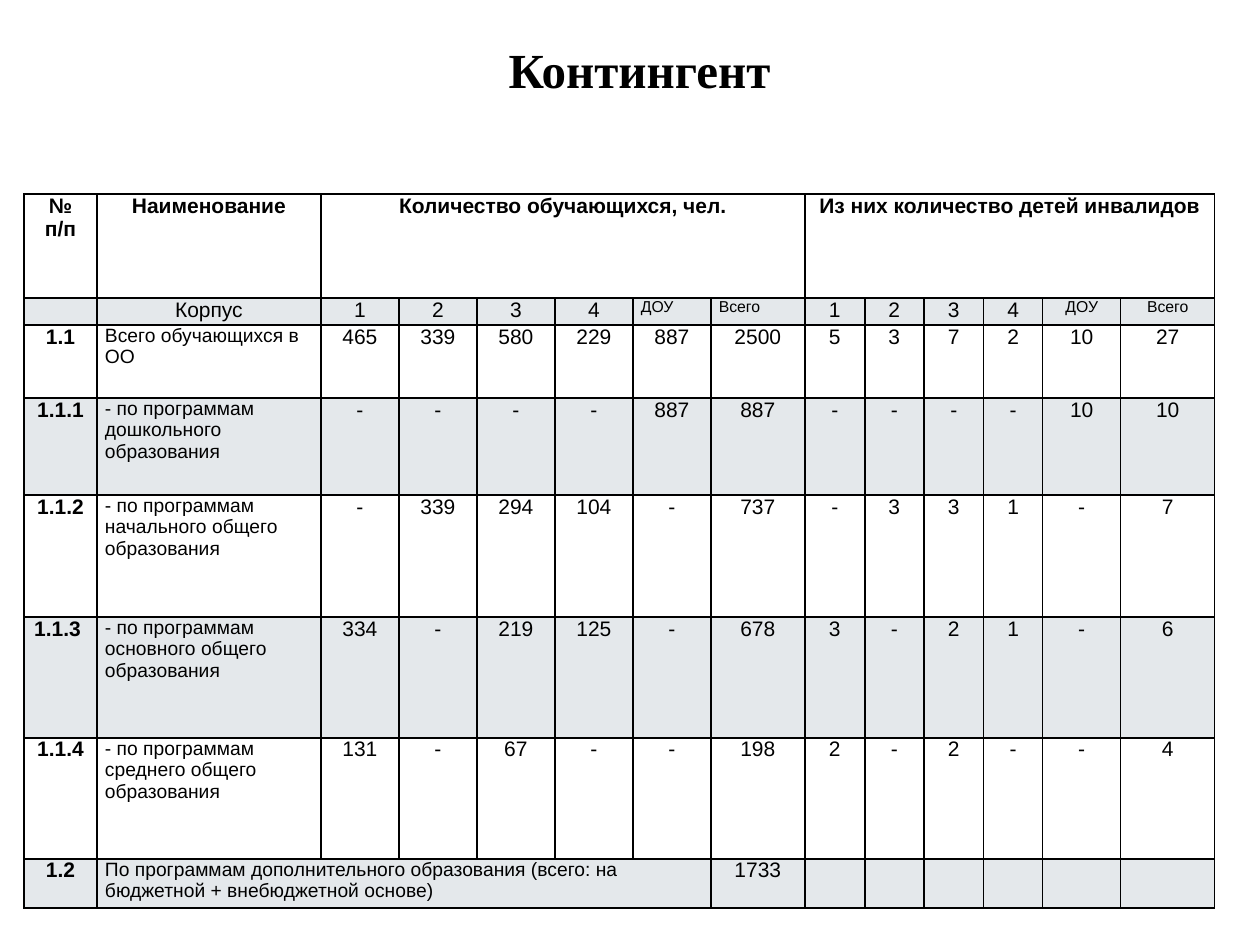
from lxml import etree
from pptx import Presentation
from pptx.dml.color import RGBColor
from pptx.enum.text import MSO_ANCHOR, PP_ALIGN
from pptx.oxml.ns import qn
from pptx.util import Emu, Pt

LEFT, CENTER = PP_ALIGN.LEFT, PP_ALIGN.CENTER
PX = 914400 // 126
BLACK, BAND = "000000", "78909C"
BAND_ALPHA = 20

TITLE = "Контингент"
BUILDINGS = ["1", "2", "3", "4", "ДОУ", "Всего"]
# None continues the merged cell to its left
ROWS = [
    ["№ п/п", "Наименование", "Количество обучающихся, чел."] + [None] * 5
    + ["Из них количество детей инвалидов"] + [None] * 5,
    ["", "Корпус"] + BUILDINGS * 2,
    ["1.1", "Всего обучающихся в ОО", "465", "339", "580", "229", "887", "2500",
     "5", "3", "7", "2", "10", "27"],
    ["1.1.1", "- по программам дошкольного образования",
     "-", "-", "-", "-", "887", "887", "-", "-", "-", "-", "10", "10"],
    ["1.1.2", "- по программам начального общего образования",
     "-", "339", "294", "104", "-", "737", "-", "3", "3", "1", "-", "7"],
    ["1.1.3 ", "- по программам основного общего образования",
     "334", "-", "219", "125", "-", "678", "3", "-", "2", "1", "-", "6"],
    ["1.1.4", "- по программам среднего общего образования",
     "131", "-", "67", "-", "-", "198", "2", "-", "2", "-", "-", "4"],
    ["1.2", "По программам дополнительного образования (всего: на бюджетной"
     " + внебюджетной основе)"] + [None] * 5 + ["1733"] + [""] * 6,
]
COL_WIDTHS = [73, 224] + [78] * 5 + [94] + [60, 59] * 2 + [78, 94]
ROW_HEIGHTS = [104, 27, 73, 97, 122, 121, 121, 49]
TABLE_LEFT, TABLE_TOP = 24, 194


def px(n):
    return Emu(n * PX)


def rgb(color):
    return RGBColor.from_string(color)


def write(tf, text, size=12, bold=False, align=CENTER, font="Arial"):
    p = tf.paragraphs[0]
    p.alignment = align
    if not text:
        # the end mark keeps an empty cell from growing its row
        etree.SubElement(p._p, qn("a:endParaRPr"), sz=str(size * 100))
        return
    r = p.add_run()
    r.text = text
    r.font.size = Pt(size)
    r.font.bold = bold
    r.font.name = font
    r.font.color.rgb = rgb(BLACK)


def set_borders(cell):
    """Put 1 pt black lines on all sides, ahead of the fill as the schema asks."""
    tc_pr = cell._tc.get_or_add_tcPr()
    for i, side in enumerate(("lnL", "lnR", "lnT", "lnB")):
        ln = etree.Element(qn("a:" + side), w=str(Pt(1)))
        fill = etree.SubElement(ln, qn("a:solidFill"))
        etree.SubElement(fill, qn("a:srgbClr"), val=BLACK)
        tc_pr.insert(i, ln)


def set_fill(cell, banded):
    if not banded:
        cell.fill.background()
        return
    cell.fill.solid()
    cell.fill.fore_color.rgb = rgb(BAND)
    color = cell._tc.tcPr.find(".//" + qn("a:srgbClr"))
    etree.SubElement(color, qn("a:alpha"), val=str(BAND_ALPHA * 1000))


def text_format(row, col, text):
    if row == 0 or col == 0:
        return {"bold": True}
    if row == 1 and text in ("ДОУ", "Всего"):
        return {"size": 9, "align": LEFT if col < 8 else CENTER}
    if row > 1 and col == 1:
        return {"size": 11, "align": LEFT}
    return {}


def add_title(s):
    tf = s.shapes.add_textbox(px(63), px(31), px(1153), px(74)).text_frame
    tf.word_wrap = True
    tf.vertical_anchor = MSO_ANCHOR.BOTTOM
    write(tf, TITLE, size=28, bold=True, font="Times New Roman")


def add_contingent_table(s):
    frame = s.shapes.add_table(len(ROWS), len(COL_WIDTHS), px(TABLE_LEFT), px(TABLE_TOP),
                               px(sum(COL_WIDTHS)), px(sum(ROW_HEIGHTS)))
    table = frame.table
    table.first_row = table.horz_banding = False
    for column, width in zip(table.columns, COL_WIDTHS):
        column.width = px(width)
    for row, height in zip(table.rows, ROW_HEIGHTS):
        row.height = px(height)
    for i, texts in enumerate(ROWS):
        for j, text in enumerate(texts):
            cell = table.cell(i, j)
            cell.margin_left = cell.margin_right = px(8)
            cell.margin_top = cell.margin_bottom = 0
            set_fill(cell, banded=i % 2 == 1)
            set_borders(cell)
            write(cell.text_frame, text, **text_format(i, j, text))
            if text is not None and texts[j + 1:j + 2] == [None]:
                cell.merge(table.cell(i, j + 5))


def main():
    prs = Presentation()
    prs.slide_width, prs.slide_height = px(1260), px(945)
    s = prs.slides.add_slide(prs.slide_layouts[6])
    add_title(s)
    add_contingent_table(s)
    prs.save("out.pptx")


if __name__ == "__main__":
    main()
